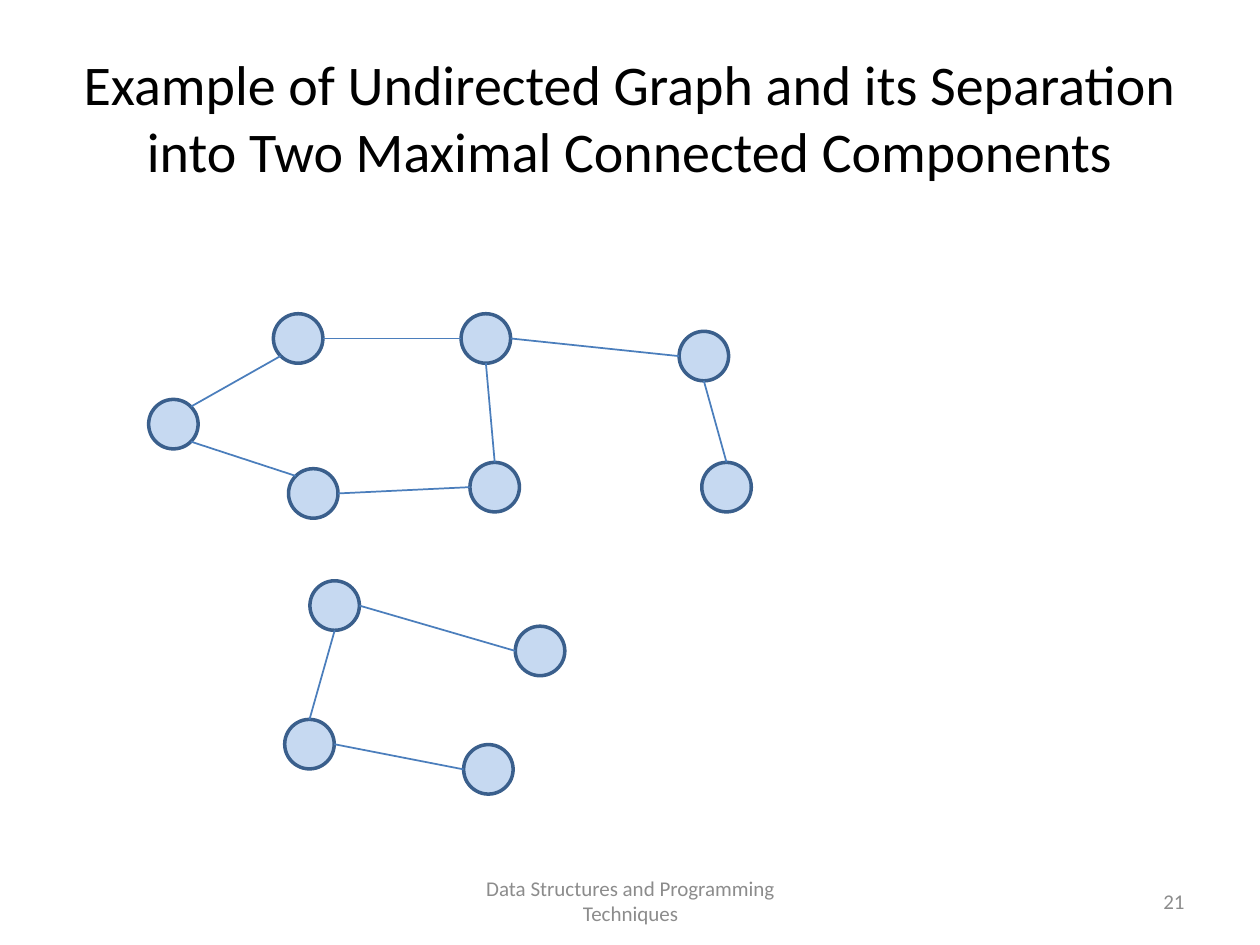
"""Build a slide showing an undirected graph split into two connected components."""
from dataclasses import dataclass
from math import cos, radians, sin

from lxml import etree
from pptx import Presentation
from pptx import util as u
from pptx.dml.color import RGBColor
from pptx.enum import shapes, text
from pptx.oxml.ns import qn

COLS, ROWS = 100, 75
SLIDE_W, SLIDE_H = u.Inches(10), u.Inches(7.5)
DIAMETER = 3.93
ANGLES = {"right": 0, "bottom_right": 45, "bottom": 90, "left": 180,
          "top_left": 225, "top": 270, "top_right": 315}


@dataclass(frozen=True)
class Theme:
    font: str = "Calibri"
    title: str = "000000"
    footer: str = "8C8C8C"
    node_fill: str = "C6D9F1"
    node_line: str = "3A5F8C"
    edge: str = "4B7EBC"
    title_size: int = 32
    footer_size: int = 12
    node_width: int = 2
    edge_width: int = 1


@dataclass(frozen=True)
class Label:
    words: str
    col: float
    row: float
    cols: float
    rows: float
    size: int
    color: str
    align: text.PP_ALIGN


@dataclass(frozen=True)
class Node:
    col: float
    row: float

    def site(self, name: str) -> tuple[float, float]:
        """Return the point of the outline that has this name."""
        angle, radius = radians(ANGLES[name]), DIAMETER / 2
        return (self.col + radius * (1 + cos(angle)),
                self.row + radius * (1 + sin(angle)))


@dataclass(frozen=True)
class Edge:
    start: str
    start_site: str
    end: str
    end_site: str


THEME = Theme()
LABELS = [
    Label("Example of Undirected Graph and its Separation into Two Maximal Connected Components",
          5, 3, 90, 12.5, THEME.title_size, THEME.title, text.PP_ALIGN.CENTER),
    Label("Data Structures and Programming Techniques",
          34.2, 69.5, 31.7, 4, THEME.footer_size, THEME.footer, text.PP_ALIGN.CENTER),
    Label("21", 71.7, 69.5, 23.3, 4, THEME.footer_size, THEME.footer, text.PP_ALIGN.RIGHT),
]
NODES = {
    "a": Node(21.7, 24.9), "b": Node(11.8, 31.7), "c": Node(22.9, 37.2),
    "d": Node(37.3, 36.7), "e": Node(36.6, 24.9), "f": Node(55.7, 36.7),
    "g": Node(53.9, 26.3),
    "h": Node(24.6, 46.1), "i": Node(40.9, 49.7), "j": Node(22.6, 57.1),
    "k": Node(36.8, 59.1),
}
EDGES = [
    Edge("b", "top_right", "a", "bottom_right"[:0] or "bottom_left"),
    Edge("a", "right", "e", "left"),
    Edge("e", "bottom", "d", "top"),
    Edge("b", "bottom_right", "c", "top_left"),
    Edge("c", "right", "d", "left"),
    Edge("e", "right", "g", "left"),
    Edge("g", "bottom", "f", "top"),
    Edge("h", "right", "i", "left"),
    Edge("h", "bottom", "j", "top"),
    Edge("j", "right", "k", "left"),
]
ANGLES["bottom_left"] = 135


def grid(col: float, row: float) -> tuple[int, int]:
    """Turn columns and rows into slide lengths."""
    return round(col * SLIDE_W / COLS), round(row * SLIDE_H / ROWS)


def style_line(line, color: str, width: int) -> None:
    """Set the colour and width of a line."""
    line.color.rgb = RGBColor.from_string(color)
    line.width = u.Pt(width)


def draw_label(s, label: Label) -> None:
    """Draw a wrapped text box with one paragraph."""
    sp = s.shapes.add_textbox(*grid(label.col, label.row), *grid(label.cols, label.rows))
    tf = sp.text_frame
    p = tf.paragraphs[0]
    r = p.add_run()
    formats = {
        tf: {"word_wrap": True, "vertical_anchor": text.MSO_ANCHOR.MIDDLE},
        p: {"alignment": label.align},
        r: {"text": label.words},
        r.font: {"name": THEME.font, "size": u.Pt(label.size)},
    }
    for target, values in formats.items():
        for name, value in values.items():
            setattr(target, name, value)
    r.font.color.rgb = RGBColor.from_string(label.color)


def draw_node(s, node: Node) -> None:
    """Draw a graph node as a circle."""
    sp = s.shapes.add_shape(shapes.MSO_SHAPE.OVAL, *grid(node.col, node.row),
                            *grid(DIAMETER, DIAMETER))
    sp.shadow.inherit = False
    sp.fill.solid()
    sp.fill.fore_color.rgb = RGBColor.from_string(THEME.node_fill)
    style_line(sp.line, THEME.node_line, THEME.node_width)


def draw_edge(s, edge: Edge) -> None:
    """Draw a straight line between the outlines of two nodes."""
    start = NODES[edge.start].site(edge.start_site)
    end = NODES[edge.end].site(edge.end_site)
    cxn = s.shapes.add_connector(shapes.MSO_CONNECTOR.STRAIGHT, *grid(*start), *grid(*end))
    style_line(cxn.line, THEME.edge, THEME.edge_width)
    etree.SubElement(cxn._element.spPr, qn("a:effectLst"))


def main() -> None:
    """Build and save the slide."""
    prs = Presentation()
    prs.slide_width, prs.slide_height = SLIDE_W, SLIDE_H
    s = prs.slides.add_slide(prs.slide_layouts[6])
    for label in LABELS:
        draw_label(s, label)
    for node in NODES.values():
        draw_node(s, node)
    for edge in EDGES:
        draw_edge(s, edge)
    prs.save("out.pptx")


if __name__ == "__main__":
    main()
